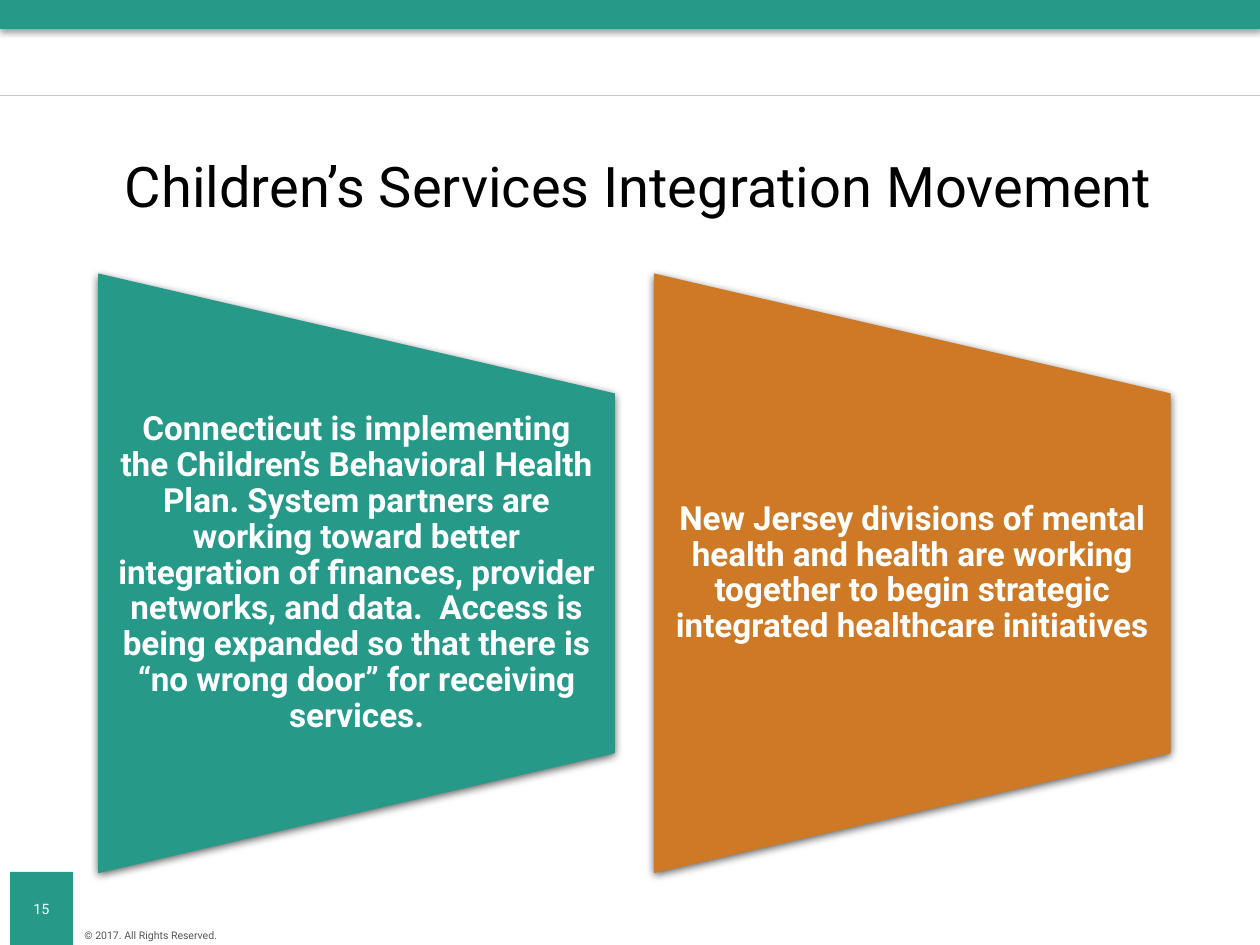
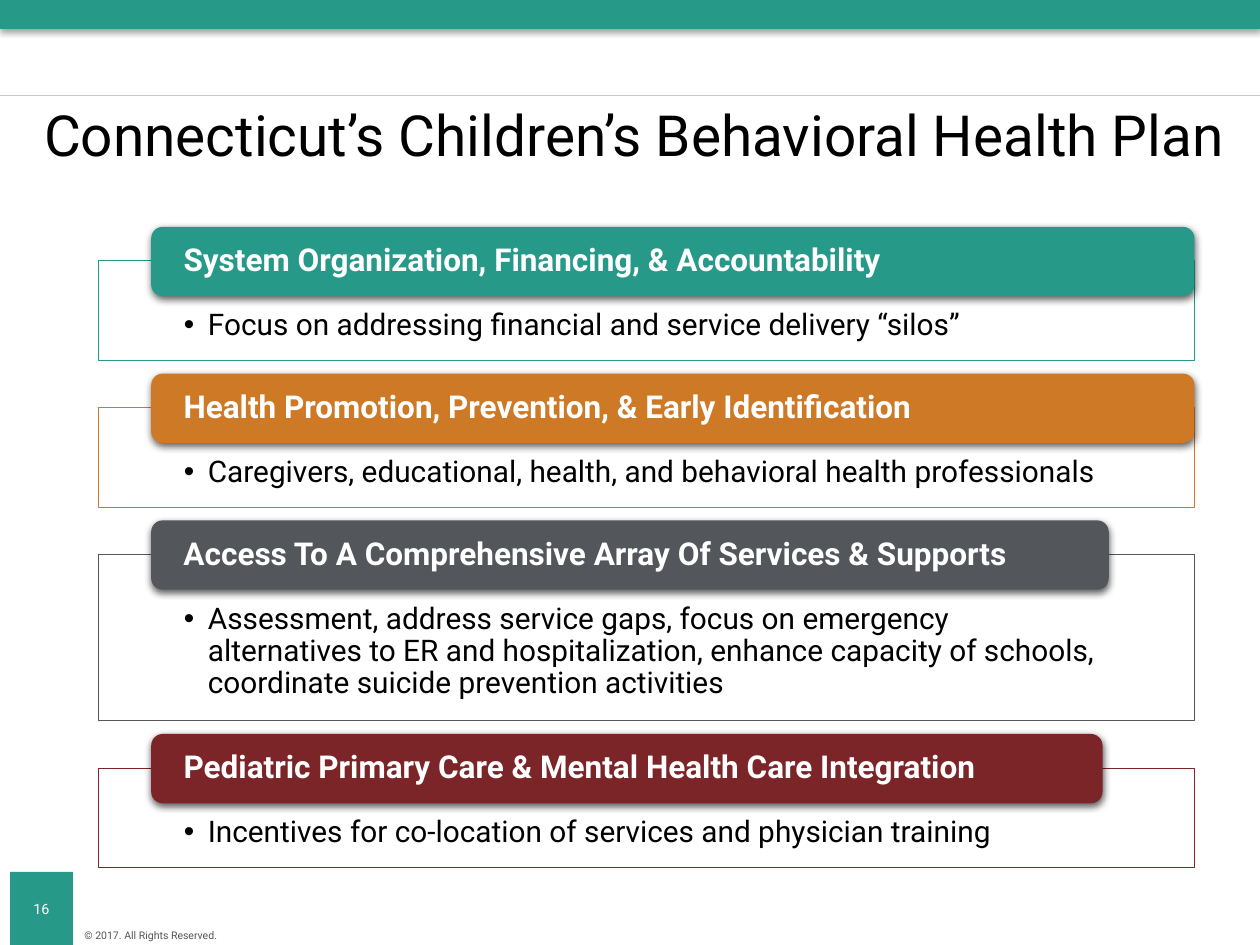
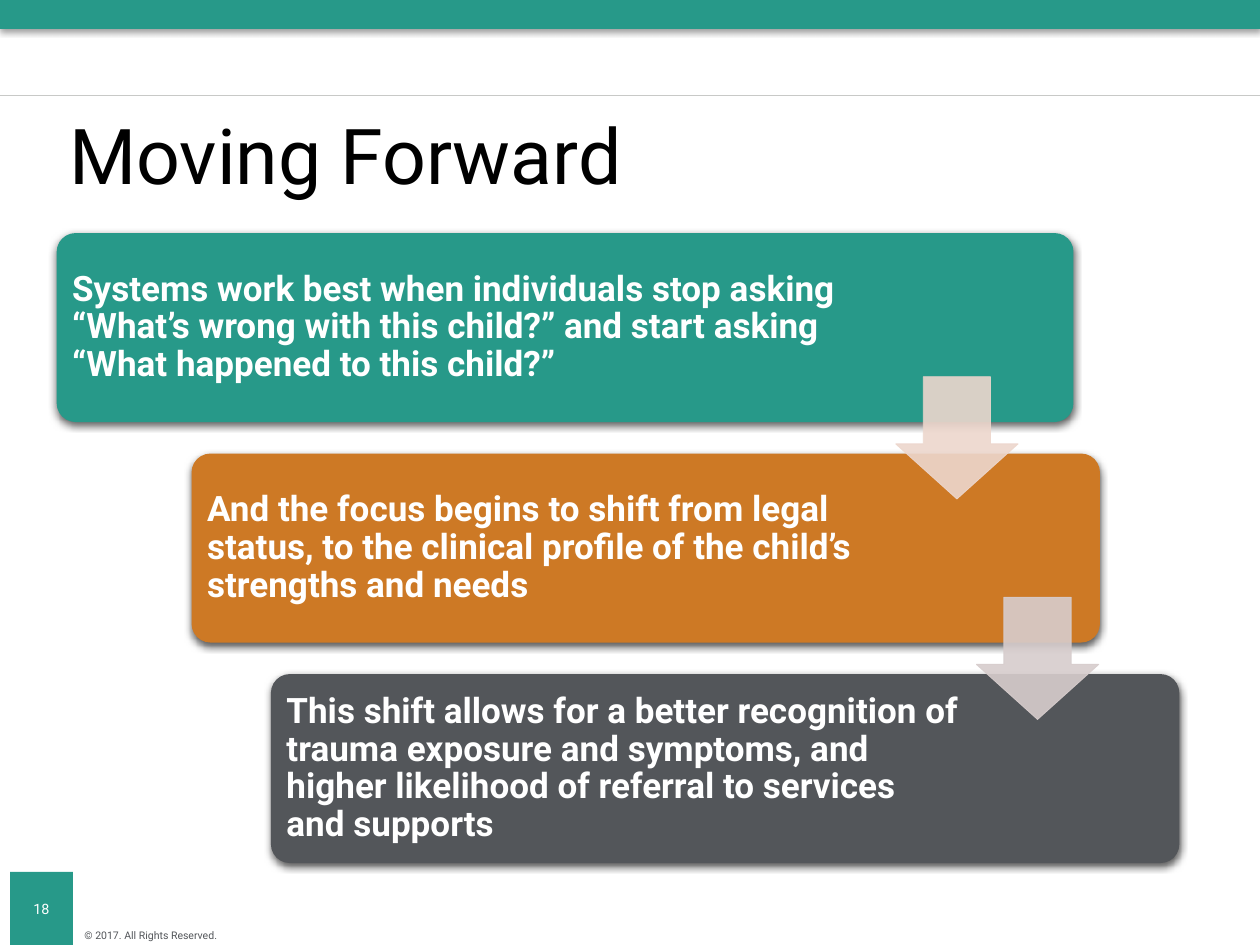
from dataclasses import dataclass
from typing import Any

from lxml.etree import SubElement
from pptx import Presentation
from pptx.dml.color import RGBColor as Rgb
from pptx.enum.shapes import MSO_CONNECTOR as Link, MSO_SHAPE as Form
from pptx.enum.text import MSO_ANCHOR as Anchor, MSO_AUTO_SIZE as Fit, PP_ALIGN as Align
from pptx.oxml.ns import qn
from pptx.util import Inches, Pt

WIDE, HIGH = Inches(10), Inches(7.5)
COL, ROW = WIDE / 100, HIGH / 75
FACE = "Roboto"
HUES = {
    "teal": "279989", "rust": "CD7925", "slate": "53565A", "wine": "7C2529",
    "rule": "C8C9C7", "white": "FFFFFF", "black": "000000",
    "peach": "EDD7CD", "mauve": "D7CDCD",
}
SOFT = (40, 4, 1)
DEEP = (63, 4.5, 1.5)


@dataclass(frozen=True)
class Box:
    """A frame in columns and rows of the slide grid."""
    x: float
    y: float
    w: float
    h: float

    def frame(self) -> dict[str, int]:
        return {"left": round(self.x * COL), "top": round(self.y * ROW),
                "width": round(self.w * COL), "height": round(self.h * ROW)}


@dataclass(frozen=True)
class Style:
    size: float
    hue: str = "white"
    bold: bool = False
    align: Any = Align.LEFT
    anchor: Any = Anchor.MIDDLE
    pad: tuple[float, ...] = (0, 0, 0, 0)
    space: float = 0.9
    hang: float = 0


@dataclass(frozen=True)
class Panel:
    head: str
    body: str
    hue: str
    high: float
    head_w: float


@dataclass(frozen=True)
class Step:
    text: str
    hue: str
    x: float
    w: float
    pad: float


PANELS = [
    Panel("System Organization, Financing, & Accountability",
          "Focus on addressing financial and service delivery “silos”",
          "teal", 7.9, 82.8),
    Panel("Health Promotion, Prevention, & Early Identification",
          "Caregivers, educational, health, and behavioral health professionals",
          "rust", 7.9, 82.8),
    Panel("Access To A Comprehensive Array Of Services & Supports",
          "Assessment, address service gaps, focus on emergency alternatives to ER and "
          "hospitalization, enhance capacity of schools, coordinate suicide prevention activities",
          "slate", 13.2, 76),
    Panel("Pediatric Primary Care & Mental Health Care Integration",
          "Incentives for co-location of services and physician training",
          "wine", 7.9, 75.5),
]
STATES = [
    ("teal", "Connecticut is implementing the Children’s Behavioral Health Plan. System partners "
             "are working toward better integration of finances, provider networks, and data. "
             " Access is being expanded so that there is “no wrong door” for receiving services."),
    ("rust", "New Jersey divisions of mental health and health are working together to begin "
             "strategic integrated healthcare initiatives"),
]
STEPS = [
    Step("Systems work best when individuals stop asking “What’s wrong with this child?” "
         "and start asking “What happened to this child?”", "teal", 4.5, 80.7, 18),
    Step("And the focus begins to shift from legal status, to the clinical profile of the "
         "child’s strengths and needs", "rust", 15.2, 72.1, 17),
    Step("This shift allows for a better recognition of trauma exposure and symptoms, and "
         "higher likelihood of referral to services and supports", "slate", 21.5, 72.1, 17),
]


def put(item: Any, vals: dict[str, Any]) -> None:
    for key, val in vals.items():
        setattr(item, key, val)


def tint(name: str) -> Rgb:
    return Rgb.from_string(HUES[name])


def write(shape: Any, text: str, style: Style) -> None:
    frame = shape.text_frame
    sides = ("margin_left", "margin_top", "margin_right", "margin_bottom")
    put(frame, {"text": text, "word_wrap": True, "auto_size": Fit.NONE,
                "vertical_anchor": style.anchor,
                **{side: round(pad * COL) for side, pad in zip(sides, style.pad)}})
    para = frame.paragraphs[0]
    put(para, {"alignment": style.align, "line_spacing": style.space})
    if style.hang:
        props = para._p.get_or_add_pPr()
        props.set("marL", str(round(style.hang * COL)))
        props.set("indent", str(-round(style.hang * COL)))
        SubElement(props, qn("a:buFont"), typeface="Arial")
        SubElement(props, qn("a:buChar"), char="•")
    font = para.runs[0].font
    put(font, {"name": FACE, "size": Pt(style.size), "bold": style.bold})
    font.color.rgb = tint(style.hue)


def label(slide: Any, box: Box, text: str, style: Style) -> None:
    write(slide.shapes.add_textbox(**box.frame()), text, style)


def draw(slide: Any, form: Any, box: Box, fill: str, line: str = "",
         shade: tuple[float, ...] = (), bends: tuple[float, ...] = ()) -> Any:
    """Add a preset shape; shade is opacity, blur and distance."""
    shape = slide.shapes.add_shape(form, **box.frame())
    shape.fill.solid()
    shape.fill.fore_color.rgb = tint(fill)
    if line:
        shape.line.color.rgb = tint(line)
        shape.line.width = Pt(0.5)
    else:
        shape.line.fill.background()
    for i, bend in enumerate(bends):
        shape.adjustments[i] = bend
    shape.shadow.inherit = False
    if shade:
        alpha, blur, dist = shade
        cast = SubElement(shape._element.spPr.find(qn("a:effectLst")), qn("a:outerShdw"),
                          blurRad=str(Pt(blur)), dist=str(Pt(dist)),
                          dir="5400000", rotWithShape="0")
        ink = SubElement(cast, qn("a:srgbClr"), val=HUES["black"])
        SubElement(ink, qn("a:alpha"), val=str(alpha * 1000))
    return shape


def fade(shape: Any, share: int) -> None:
    """Set the opacity of fill and line in percent."""
    for ink in shape._element.spPr.iter(qn("a:srgbClr")):
        SubElement(ink, qn("a:alpha"), val=str(share * 1000))


def start(deck: Any, page: int, title: str, box: Box, size: float,
          align: Any = Align.LEFT) -> Any:
    """Add a slide with the shared band, rule, footer and title."""
    slide = deck.slides.add_slide(deck.slide_layouts[5])
    rule = slide.shapes.add_connector(Link.STRAIGHT, 0, round(7.6 * ROW), WIDE, round(7.6 * ROW))
    rule.line.color.rgb = tint("rule")
    rule.line.width = Pt(0.5)
    SubElement(rule._element.spPr, qn("a:effectLst"))
    draw(slide, Form.RECTANGLE, Box(0, 0, 100, 2.3), "teal", shade=SOFT)
    badge = draw(slide, Form.RECTANGLE, Box(0.8, 69.2, 5, 5.8), "teal")
    write(badge, str(page), Style(8.2, align=Align.CENTER, pad=(0.7, 0.4, 0.7, 0.4), space=1))
    label(slide, Box(6.7, 73.3, 14.8, 2.2), "© 2017. All Rights Reserved.",
          Style(6, "slate", pad=(0, 0, 0, 0.4), space=1))
    put(slide.shapes.title, box.frame())
    write(slide.shapes.title, title,
          Style(size, "black", align=align, pad=(1.5, 0.5, 1, 0.5)))
    return slide


def show_states(deck: Any) -> None:
    slide = start(deck, 15, "Children’s Services Integration Movement",
                  Box(3.3, 10.3, 94.3, 9.5), 32, Align.CENTER)
    wide, high, mid = 41, 47.6, 45.5
    style = Style(19, bold=True, align=Align.CENTER, pad=(1.3, 0, 1.3, 0))
    for i, (hue, text) in enumerate(STATES):
        left = 7.8 + i * 44.1
        turned = Box(left + (wide - high) / 2, mid - wide / 2, high, wide)
        draw(slide, Form.FLOWCHART_MANUAL_OPERATION, turned, hue, shade=DEEP).rotation = 270
        label(slide, Box(left, mid - high * 0.3, wide, high * 0.6), text, style)


def show_plan(deck: Any) -> None:
    slide = start(deck, 16, "Connecticut’s Children’s Behavioral Health Plan",
                  Box(2, 6.1, 96.4, 9.7), 32.4)
    body = Style(17, "black", anchor=Anchor.TOP, pad=(6.8, 3.9, 6.8, 1.3), hang=1.9)
    head = Style(18, bold=True, pad=(2.3, 0, 2.3, 0))
    top = 20.7
    for panel in PANELS:
        card = draw(slide, Form.RECTANGLE, Box(7.8, top, 87, panel.high), "white", panel.hue)
        write(card, panel.body, body)
        tag = draw(slide, Form.ROUNDED_RECTANGLE, Box(12, top - 2.7, panel.head_w, 5.5),
                   panel.hue, shade=DEEP)
        write(tag, panel.head, head)
        top += panel.high + 3.75


def show_steps(deck: Any) -> None:
    slide = start(deck, 18, "Moving Forward", Box(4, 8.7, 92, 7.9), 44)
    pitch = 17.5
    for i, step in enumerate(STEPS):
        card = draw(slide, Form.ROUNDED_RECTANGLE, Box(step.x, 18.5 + i * pitch, step.w, 15),
                    step.hue, shade=DEEP, bends=(0.1,))
        write(card, step.text, Style(20, bold=True, pad=(0.8, 0.8, step.pad, 0.8)))
    for i, hue in enumerate(("peach", "mauve")):
        arrow = draw(slide, Form.DOWN_ARROW, Box(71.1 + i * 6.4, 29.9 + i * pitch, 9.7, 9.7),
                     hue, hue, bends=(0.55, 0.45))
        fade(arrow, 90)


def main() -> None:
    deck = Presentation()
    put(deck, {"slide_width": WIDE, "slide_height": HIGH})
    for show in (show_states, show_plan, show_steps):
        show(deck)
    deck.save("out.pptx")


if __name__ == "__main__":
    main()
